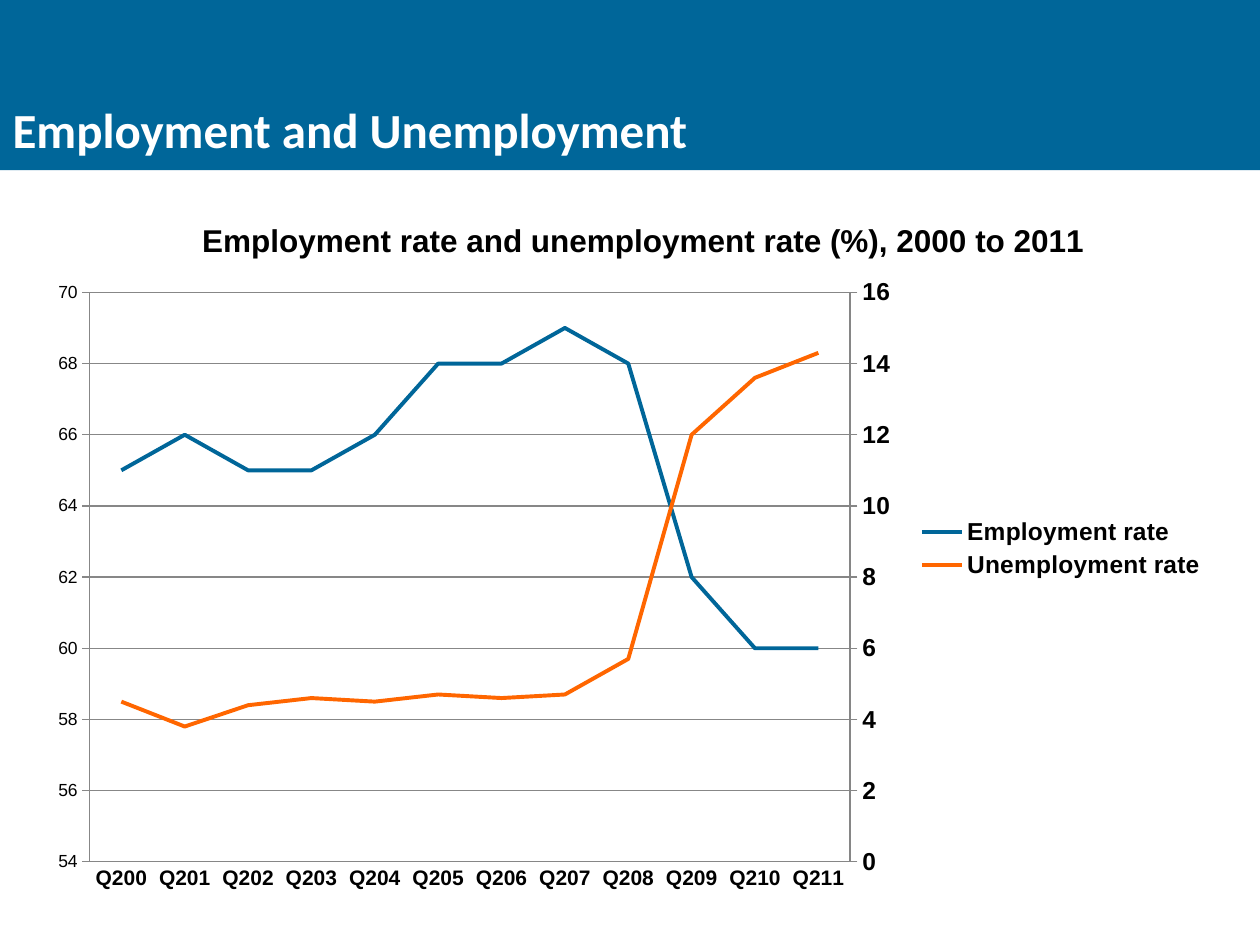
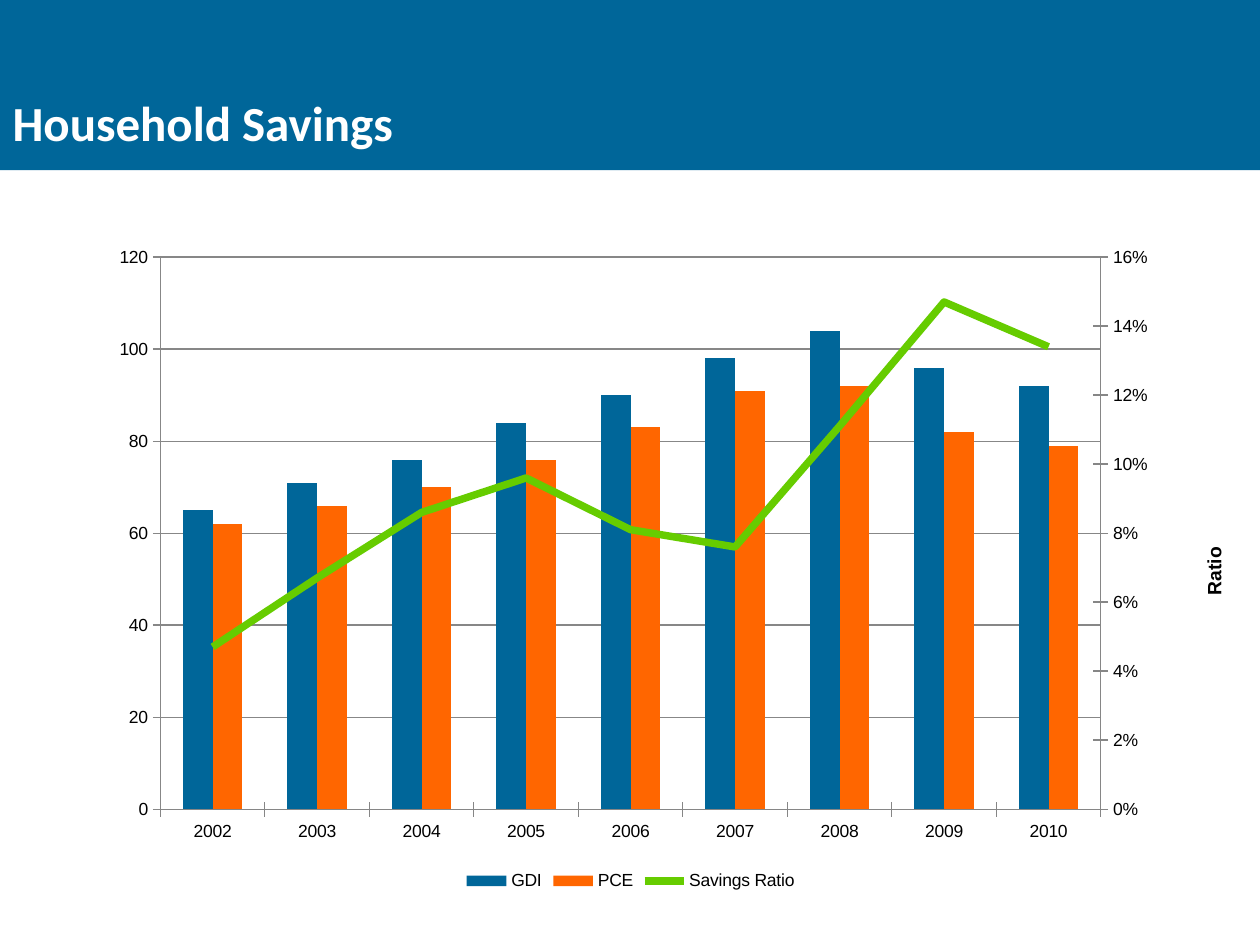
from dataclasses import dataclass

from pptx import Presentation
from pptx.chart.axis import ValueAxis
from pptx.chart.data import CategoryChartData
from pptx.dml.color import RGBColor
from pptx.enum.chart import XL_CHART_TYPE, XL_LEGEND_POSITION, XL_MARKER_STYLE, XL_TICK_MARK
from pptx.enum.shapes import MSO_SHAPE
from pptx.enum.text import MSO_ANCHOR, MSO_AUTO_SIZE, PP_ALIGN
from pptx.oxml import parse_xml
from pptx.oxml.ns import nsdecls, qn
from pptx.util import Inches, Pt

RECT = MSO_SHAPE.RECTANGLE
LINE, COLUMN = XL_CHART_TYPE.LINE, XL_CHART_TYPE.COLUMN_CLUSTERED
LEGEND_RIGHT, LEGEND_BOTTOM = XL_LEGEND_POSITION.RIGHT, XL_LEGEND_POSITION.BOTTOM
TICK_NONE, TICK_CROSS = XL_TICK_MARK.NONE, XL_TICK_MARK.CROSS
NO_MARKER = XL_MARKER_STYLE.NONE
BOTTOM, LEFT, NO_FIT = MSO_ANCHOR.BOTTOM, PP_ALIGN.LEFT, MSO_AUTO_SIZE.NONE
COLUMNS, ROWS = 100, 75
TITLE_ONLY = 5

RIGHT_PLOT = """<c:lineChart %s><c:grouping val="%s"/><c:varyColors val="0"/>
<c:marker val="1"/><c:axId val="50010"/><c:axId val="50020"/></c:lineChart>"""
RIGHT_VALUES = """<c:valAx %s><c:axId val="50020"/>
<c:scaling><c:orientation val="minMax"/></c:scaling><c:delete val="0"/>
<c:axPos val="r"/><c:tickLblPos val="nextTo"/><c:crossAx val="50010"/>
<c:crosses val="max"/><c:crossBetween val="between"/></c:valAx>"""
RIGHT_CATEGORIES = """<c:catAx %s><c:axId val="50010"/>
<c:scaling><c:orientation val="minMax"/></c:scaling><c:delete val="1"/>
<c:axPos val="b"/><c:crossAx val="50020"/><c:crosses val="autoZero"/></c:catAx>"""


@dataclass
class Theme:
    blue: RGBColor = RGBColor(0x00, 0x66, 0x99)
    orange: RGBColor = RGBColor(0xFF, 0x66, 0x00)
    green: RGBColor = RGBColor(0x66, 0xCC, 0x00)
    grey: RGBColor = RGBColor(0x86, 0x86, 0x86)
    black: RGBColor = RGBColor(0, 0, 0)
    white: RGBColor = RGBColor(0xFF, 0xFF, 0xFF)
    head_font: str = "Calibri"
    body_font: str = "Arial"
    head: int = 28
    chart_title: int = 18
    large: int = 14
    medium: int = 12
    axis_title: int = 11
    small: int = 10
    thin: float = 0.75
    line: float = 2.25
    thick: float = 4.25


def apply(target, values):
    for name, value in values.items():
        setattr(target, name, value)


def set_layout(el, index, **shares):
    old = el.find(qn("c:layout"))
    if old is not None:
        el.remove(old)
    target = '<c:layoutTarget val="inner"/>' if "w" in shares else ""
    modes = "".join(f'<c:{k}Mode val="edge"/>' for k in "xy")
    sizes = "".join(f'<c:{k} val="{v}"/>' for k, v in shares.items())
    el.insert(index, parse_xml(
        f'<c:layout {nsdecls("c")}><c:manualLayout>{target}{modes}{sizes}'
        "</c:manualLayout></c:layout>"))


class Deck:
    def __init__(self, theme):
        self.theme = theme
        self.prs = Presentation()
        apply(self.prs, {"slide_width": Inches(10), "slide_height": Inches(7.5)})
        self.s = None

    def box(self, x, y, w, h):
        col, row = self.prs.slide_width / COLUMNS, self.prs.slide_height / ROWS
        return [round(v) for v in (x * col, y * row, w * col, h * row)]

    def font(self, font, size, bold=False, color=None, name=None):
        apply(font, {"size": Pt(size), "bold": bold, "name": name or self.theme.body_font})
        font.color.rgb = color or self.theme.black

    def slide(self, title, at):
        self.s = self.prs.slides.add_slide(self.prs.slide_layouts[TITLE_ONLY])
        self.band()
        self.title(title, at)

    def band(self):
        sp = self.s.shapes.add_shape(RECT, *self.box(0, 0, COLUMNS, 13.5))
        sp.shadow.inherit = False
        sp.fill.solid()
        sp.fill.fore_color.rgb = self.theme.blue
        sp.line.fill.background()
        self.s.shapes.element.insert(2, sp.element)

    def title(self, text, at):
        sp = self.s.shapes.title
        apply(sp, dict(zip(("left", "top", "width", "height"), self.box(*at))))
        sp.fill.solid()
        sp.fill.fore_color.rgb = self.theme.blue
        tf = sp.text_frame
        apply(tf, {"text": text, "vertical_anchor": BOTTOM, "auto_size": NO_FIT, "word_wrap": True})
        p = tf.paragraphs[0]
        p.alignment = LEFT
        self.font(p.runs[0].font, self.theme.head, True, self.theme.white, self.theme.head_font)

    def chart(self, kind, at, cats, series, plot, grouping="standard"):
        data = CategoryChartData()
        data.categories = cats
        for name, values, _, _ in series:
            data.add_series(name, values)
        chart = self.s.shapes.add_chart(kind, *self.box(*at), data).chart
        self.font(chart.font, self.theme.small)
        chart.has_title = False
        right = self.move_last_to_right(chart, grouping)
        set_layout(chart.element.chart.plotArea, 0, **plot)
        drawn = [ser for part in chart.plots for ser in part.series]
        for ser, (_, _, color, width) in zip(drawn, series):
            if width:
                apply(ser, {"smooth": False})
                ser.marker.style = NO_MARKER
                ser.format.line.color.rgb = color
                ser.format.line.width = Pt(width)
            else:
                ser.format.fill.solid()
                ser.format.fill.fore_color.rgb = color
        for part in chart.plots:
            part.vary_by_categories = False
        return chart, right

    def move_last_to_right(self, chart, grouping):
        area = chart.element.chart.plotArea
        first = list(chart.plots)[0]
        ser = list(first.series)[-1]._element
        for el in ser.findall(qn("c:invertIfNegative")):
            ser.remove(el)
        plot = parse_xml(RIGHT_PLOT % (nsdecls("c"), grouping))
        plot.insert(2, ser)
        area.find(qn("c:catAx")).addprevious(plot)
        axis = parse_xml(RIGHT_VALUES % nsdecls("c"))
        area.findall(qn("c:valAx"))[-1].addnext(axis)
        axis.addnext(parse_xml(RIGHT_CATEGORIES % nsdecls("c")))
        return ValueAxis(axis)

    def axis(self, axis, size, bold=False, tick=TICK_CROSS, scale=None, fmt="General", grid=False):
        apply(axis, {"major_tick_mark": tick, "minor_tick_mark": TICK_NONE})
        self.font(axis.tick_labels.font, size, bold)
        lines = [axis.format.line]
        if scale:
            apply(axis, dict(zip(("minimum_scale", "maximum_scale", "major_unit"), scale)))
            apply(axis.tick_labels, {"number_format": fmt, "number_format_is_linked": False})
            axis.has_major_gridlines = grid
            if grid:
                lines.append(axis.major_gridlines.format.line)
        for line in lines:
            line.color.rgb = self.theme.grey
            line.width = Pt(self.theme.thin)

    def caption(self, owner, text, size, x, y):
        title = getattr(owner, "axis_title", None) or owner.chart_title
        title.text_frame.text = text
        self.font(title.text_frame.paragraphs[0].runs[0].font, size, True)
        set_layout(title._element, 1, x=x, y=y)

    def legend(self, chart, position, size, bold=False):
        chart.has_legend = True
        apply(chart.legend, {"position": position, "include_in_layout": False})
        self.font(chart.legend.font, size, bold)


def employment(deck):
    t = deck.theme
    deck.slide("Employment and Unemployment", (0, 3.2, 93.9, 9.9))
    chart, right = deck.chart(
        LINE, (2.4, 15.3, 94.3, 56.5), [f"Q2{year:02}" for year in range(12)],
        [("Employment rate", (65, 66, 65, 65, 66, 68, 68, 69, 68, 62, 60, 60), t.blue, t.line),
         ("Unemployment rate",
          (4.5, 3.8, 4.4, 4.6, 4.5, 4.7, 4.6, 4.7, 5.7, 12, 13.6, 14.3), t.orange, t.line)],
        {"x": 0.05, "y": 0.14, "w": 0.64, "h": 0.8})
    deck.caption(chart, "Employment rate and unemployment rate (%), 2000 to 2011",
                 t.chart_title, 0.14, 0.03)
    deck.axis(chart.category_axis, t.medium, True, TICK_NONE)
    deck.axis(chart.value_axis, t.large, True, TICK_NONE, (54, 70, 2), grid=True)
    deck.axis(right, t.large, True, scale=(0, 16, 2))
    deck.legend(chart, LEGEND_RIGHT, t.large, True)


def savings(deck):
    t = deck.theme
    deck.slide("Household Savings", (0, 0, 87, 12.5))
    chart, right = deck.chart(
        COLUMN, (2.2, 18.3, 95.7, 52.8), [str(year) for year in range(2002, 2011)],
        [("GDI", (65, 71, 76, 84, 90, 98, 104, 96, 92), t.blue, None),
         ("PCE", (62, 66, 70, 76, 83, 91, 92, 82, 79), t.orange, None),
         ("Savings Ratio",
          (0.047, 0.067, 0.086, 0.096, 0.081, 0.076, 0.111, 0.147, 0.134), t.green, t.thick)],
        {"x": 0.11, "y": 0.04, "w": 0.78, "h": 0.83}, "stacked")
    apply(chart.plots[0], {"gap_width": 150, "overlap": 0})
    deck.axis(chart.category_axis, t.small)
    deck.axis(chart.value_axis, t.small, scale=(0, 120, 20), grid=True,
              fmt='_-* #,##0_-;\\-* #,##0_-;_-* "-"??_-;_-@_')
    deck.axis(right, t.small, scale=(0, 0.16, 0.02), fmt="0%")
    deck.caption(chart.value_axis, "€billions", t.axis_title, 0.02, 0.47)
    deck.caption(right, "Ratio", t.axis_title, 0.97, 0.47)
    deck.legend(chart, LEGEND_BOTTOM, t.small)


def main():
    deck = Deck(Theme())
    employment(deck)
    savings(deck)
    deck.prs.save("out.pptx")


if __name__ == "__main__":
    main()
